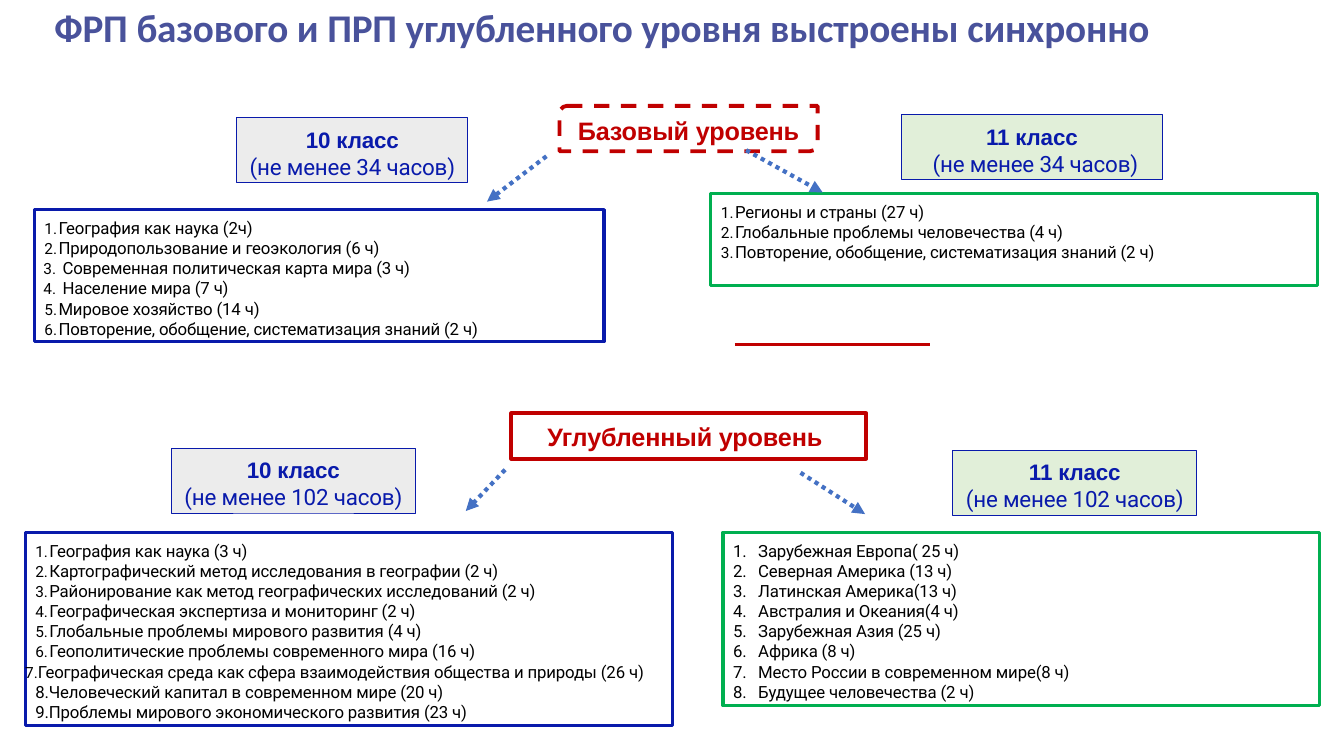
import pptx
import pptx.dml.color
import pptx.enum.dml
import pptx.enum.shapes
import pptx.enum.text
import pptx.oxml.ns
import pptx.util
import lxml.etree

Inches = pptx.util.Inches
Pt = pptx.util.Pt
RGB = pptx.dml.color.RGBColor.from_string
ALIGN = pptx.enum.text.PP_ALIGN
ANCHOR = pptx.enum.text.MSO_ANCHOR
SHAPE = pptx.enum.shapes.MSO_SHAPE
DASH = pptx.enum.dml.MSO_LINE


class Theme:
    red, navy, green, title = "C00000", "091AAB", "00AF50", "49529B"
    arrow, text = "4471C4", "000000"
    grade_10, grade_11 = "ECECEC", "E1EFD9"
    title_size, level_size, grade_size, list_size = 28, 18, 16, 12
    heading_font, label_font, body_font = "Calibri", "Arial", "Roboto"
    thin, rule, frame, arrow_width = 0.72, 2.28, 2.75, 3
    list_pitch = 14.4
    tracking = "-10"


def apply(target, values):
    for name, value in values.items():
        setattr(target, name, value)


def add_xml(parent, tag, **attributes):
    return lxml.etree.SubElement(parent, pptx.oxml.ns.qn(tag), attributes)


class LevelsSlide:
    def __init__(self, presentation, theme):
        self.theme = theme
        self.slide = presentation.slides.add_slide(presentation.slide_layouts[4])
        self.shapes = self.slide.shapes

    def place(self, part, box):
        apply(part, dict(zip(("left", "top", "width", "height"), map(Inches, box))))

    def frame(self, part, left, top):
        apply(part.text_frame, {
            "word_wrap": True,
            "auto_size": pptx.enum.text.MSO_AUTO_SIZE.NONE,
            "vertical_anchor": ANCHOR.TOP,
            "margin_left": Inches(left), "margin_top": Inches(top),
            "margin_right": 0, "margin_bottom": 0,
        })
        return part.text_frame

    def outline(self, part, color, width, dash=None):
        part.line.color.rgb = RGB(color)
        apply(part.line, {"width": Pt(width), "dash_style": dash})

    def fill_text(self, paragraph, text, font, size, color, bold=False, align=ALIGN.LEFT):
        apply(paragraph, {"alignment": align, "space_before": Pt(0),
                          "space_after": Pt(0), "line_spacing": 1.0})
        run = paragraph.add_run()
        run.text = text
        apply(run.font, {"name": font, "size": Pt(size), "bold": bold})
        run.font.color.rgb = RGB(color)
        run._r.get_or_add_rPr().set("spc", self.theme.tracking)

    def title(self, text, box):
        heading = self.shapes.title
        self.place(heading, box)
        frame = self.frame(heading, 0.01, 0.02)
        self.fill_text(frame.paragraphs[0], text, self.theme.heading_font,
                       self.theme.title_size, self.theme.title, True)

    def box(self, kind, box, color, width, fill=None, dash=None):
        part = self.shapes.add_shape(kind, *map(Inches, box))
        part.shadow.inherit = False
        if fill:
            part.fill.solid()
            part.fill.fore_color.rgb = RGB(fill)
        else:
            part.fill.background()
        self.outline(part, color, width, dash)
        return part

    def level(self, text, kind, box, left, top, dash=None):
        label = self.box(kind, box, self.theme.red, self.theme.frame, dash=dash)
        frame = self.frame(label, left, top)
        self.fill_text(frame.paragraphs[0], text, self.theme.label_font,
                       self.theme.level_size, self.theme.red, True)

    def grade(self, name, hours, box, fill, shift=0):
        card = self.box(SHAPE.RECTANGLE, box, self.theme.navy, self.theme.thin, fill)
        frame = self.frame(card, 0, 0.08)
        size, color = self.theme.grade_size, self.theme.navy
        self.fill_text(frame.paragraphs[0], name, self.theme.label_font, size, color,
                       True, ALIGN.CENTER)
        amount = frame.add_paragraph()
        self.fill_text(amount, f"(не менее {hours} часов)", self.theme.body_font, size,
                       color, False, ALIGN.CENTER)
        amount._p.get_or_add_pPr().set("marL", str(Inches(shift)))

    def topics(self, index, box, color, items, indent, number_size=92):
        listing = self.slide.placeholders[index]
        self.place(listing, box)
        self.outline(listing, color, self.theme.rule)
        frame = self.frame(listing, 0, 0.08)
        for position, item in enumerate(items):
            text, (left, hang) = item if isinstance(item, tuple) else (item, indent)
            paragraph = frame.add_paragraph() if position else frame.paragraphs[0]
            self.fill_text(paragraph, text, self.theme.body_font, self.theme.list_size,
                           self.theme.text)
            paragraph.line_spacing = Pt(self.theme.list_pitch)
            properties = paragraph._p.get_or_add_pPr()
            properties.set("marL", str(Inches(left)))
            properties.set("indent", str(Inches(-hang)))
            if hang:
                add_xml(properties, "a:buSzPct", val=str(number_size * 1000))
                add_xml(properties, "a:buFont", typeface=self.theme.body_font)
                add_xml(properties, "a:buAutoNum", type="arabicPeriod")
            else:
                add_xml(properties, "a:buNone")

    def line(self, start, end, color, width, dash=None, arrow=False):
        link = self.shapes.add_connector(pptx.enum.shapes.MSO_CONNECTOR.STRAIGHT,
                                         *map(Inches, start + end))
        self.outline(link, color, width, dash)
        if arrow:
            add_xml(link.line._get_or_add_ln(), "a:tailEnd", type="triangle")
        add_xml(link._element.spPr, "a:effectLst")


def main():
    presentation = pptx.Presentation()
    apply(presentation, {"slide_width": Inches(13.33), "slide_height": Inches(7.5)})
    theme = Theme()
    page = LevelsSlide(presentation, theme)

    page.title("ФРП базового и ПРП углубленного уровня выстроены синхронно",
               (0.53, 0.01, 11.02, 0.49))
    page.level("Базовый уровень", SHAPE.ROUND_2_DIAG_RECTANGLE,
               (5.55, 1.05, 2.56, 0.45), 0.16, 0.07, DASH.DASH)
    page.level("Углубленный уровень", SHAPE.RECTANGLE, (5.07, 4.1, 3.52, 0.45), 0.36, 0.08)

    page.grade("10 класс", 34, (2.35, 1.17, 2.29, 0.64), theme.grade_10)
    page.grade("11 класс", 34, (8.94, 1.14, 2.59, 0.64), theme.grade_11, 0.07)
    page.grade("10 класс", 102, (1.7, 4.45, 2.42, 0.64), theme.grade_10)
    page.grade("11 класс", 102, (9.45, 4.47, 2.42, 0.64), theme.grade_11)

    close, wider, roomy = (0.24, 0.14), (0.28, 0.19), (0.35, 0.25)
    outdented, typed = (0.12, 0.12), (0.1, 0)
    page.topics(1, (0.34, 2.08, 5.65, 1.31), theme.navy, [
        "География как наука (2ч)",
        "Природопользование и геоэкология (6 ч)",
        ("Современная политическая карта мира (3 ч)", wider),
        ("Население мира (7 ч)", wider),
        "Мировое хозяйство (14 ч)",
        "Повторение, обобщение, систематизация знаний (2 ч)",
    ], close)
    page.topics(3, (7.05, 1.92, 6.02, 0.91), theme.green, [
        "Регионы и страны (27 ч)",
        "Глобальные проблемы человечества (4 ч)",
        "Повторение, обобщение, систематизация знаний (2 ч)",
    ], close)
    page.topics(2, (0.25, 5.28, 6.42, 1.92), theme.navy, [
        "География как наука (3 ч)",
        "Картографический метод исследования в географии (2 ч)",
        "Районирование как метод географических исследований (2 ч)",
        "Географическая экспертиза и мониторинг (2 ч)",
        "Глобальные проблемы мирового развития (4 ч)",
        "Геополитические проблемы современного мира (16 ч)",
        ("Географическая среда как сфера взаимодействия общества и природы (26 ч)", outdented),
        ("8.Человеческий капитал в современном мире (20 ч)", typed),
        ("9.Проблемы мирового экономического развития (23 ч)", typed),
    ], close)
    page.topics(4, (7.17, 5.28, 5.92, 1.72), theme.green, [
        "Зарубежная Европа( 25 ч)",
        "Северная Америка (13 ч)",
        "Латинская Америка(13 ч)",
        "Австралия и Океания(4 ч)",
        "Зарубежная Азия (25 ч)",
        "Африка (8 ч)",
        "Место России в современном мире(8 ч)",
        "Будущее человечества (2 ч)",
    ], roomy, 100)

    for start, end in (
        ((7.4, 1.49), (8.16, 1.91)),
        ((5.42, 1.55), (4.83, 2.0)),
        ((7.94, 4.69), (8.58, 5.1)),
        ((5.01, 4.66), (4.62, 5.07)),
    ):
        page.line(start, end, theme.arrow, theme.arrow_width, DASH.ROUND_DOT, True)
    page.line((7.29, 3.42), (9.22, 3.42), theme.red, theme.rule)

    presentation.save("out.pptx")


if __name__ == "__main__":
    main()
